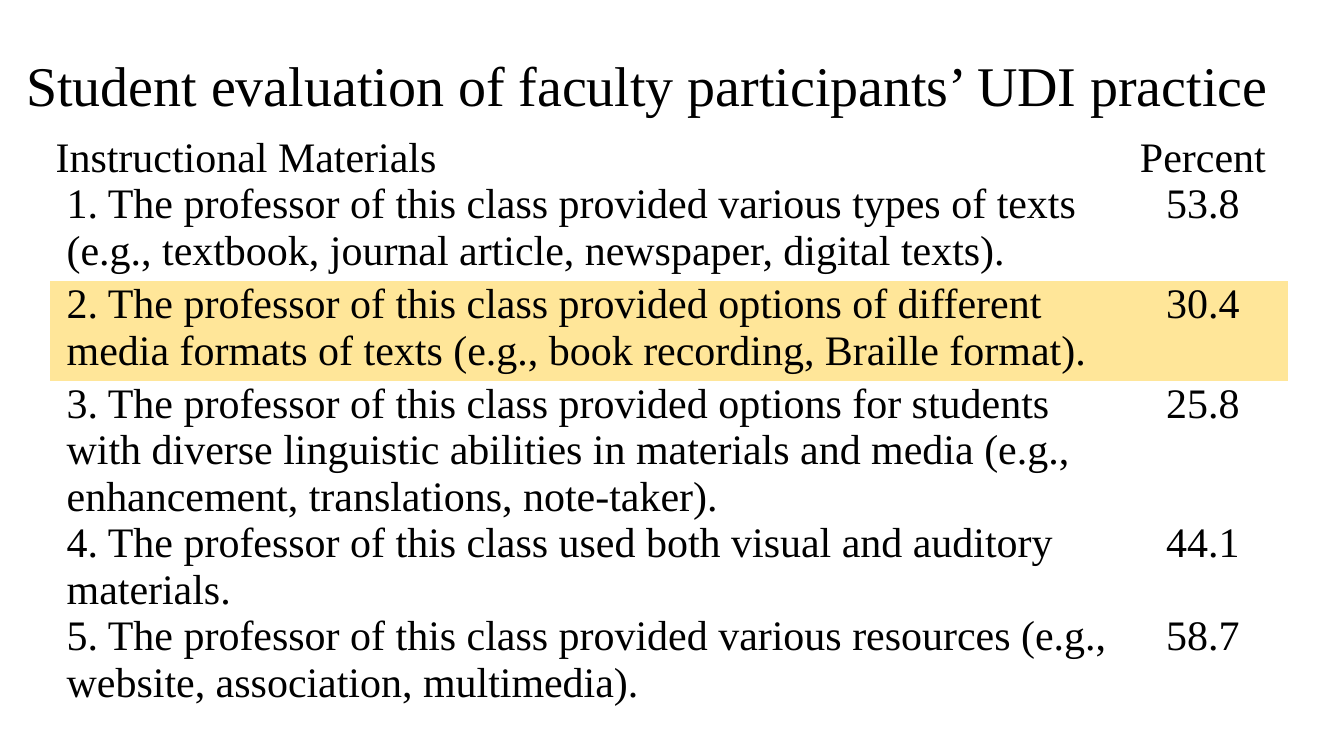
from pptx import Presentation
from pptx import util as u
from pptx.dml.color import RGBColor
from pptx.enum import text

BLACK = RGBColor(0x00, 0x00, 0x00)
WHITE = RGBColor(0xFF, 0xFF, 0xFF)
HIGHLIGHT = RGBColor(0xFF, 0xE6, 0x99)
FONT = "Times New Roman"
PLAIN_STYLE = "{2D5ABB26-0587-4C30-8999-92F81FD0307C}"
HIGHLIGHTED_ROW = 2
COLUMN_WIDTHS = (26.9, 4.29)
ROW_HEIGHTS = (0.97, 2.51, 2.51, 3.35, 1.68, 2.69)
RESULTS = (
    ("Instructional Materials", "Percent"),
    ("1. The professor of this class provided various types of texts "
     "(e.g., textbook, journal article, newspaper, digital texts).", "53.8"),
    ("2. The professor of this class provided options of different media "
     "formats of texts (e.g., book recording, Braille format).", "30.4"),
    ("3. The professor of this class provided options for students with "
     "diverse linguistic abilities in materials and media (e.g., "
     "enhancement, translations, note-taker).", "25.8"),
    ("4. The professor of this class used both visual and auditory "
     "materials.", "44.1"),
    ("5. The professor of this class provided various resources (e.g., "
     "website, association, multimedia).", "58.7"),
)


def format_runs(para, size):
    """Give every run of a paragraph the slide's font, size and colour."""
    for span in para.runs:
        span.font.name = FONT
        span.font.size = u.Pt(size)
        span.font.color.rgb = BLACK


def add_title(page, wording):
    """Place and fill the title placeholder."""
    title = page.shapes.title
    title.left, title.top = u.Cm(0.41), u.Cm(1.02)
    title.width, title.height = u.Cm(33.45), u.Cm(2.39)
    frame = title.text_frame
    frame.text = wording
    frame.word_wrap = True
    frame.auto_size = text.MSO_AUTO_SIZE.NONE
    frame.vertical_anchor = text.MSO_ANCHOR.MIDDLE
    para = frame.paragraphs[0]
    para.alignment = text.PP_ALIGN.LEFT
    para.line_spacing = 0.9
    format_runs(para, 40)


def fill_cell(cell, wording, fill, centred, indented):
    """Write one table cell with its fill, margins and alignment."""
    cell.text = wording
    cell.fill.solid()
    cell.fill.fore_color.rgb = fill
    cell.margin_left = cell.margin_right = u.Cm(0.13)
    cell.margin_top = cell.margin_bottom = 0
    para = cell.text_frame.paragraphs[0]
    para.space_before = para.space_after = u.Pt(3)
    para.alignment = text.PP_ALIGN.CENTER if centred else text.PP_ALIGN.LEFT
    if indented:
        para._p.get_or_add_pPr().set("marL", str(u.Cm(0.28)))
    format_runs(para, 30)


def add_results(page):
    """Add the table of statements and percentages."""
    frame = page.shapes.add_table(
        len(RESULTS), len(COLUMN_WIDTHS), u.Cm(1.27), u.Cm(3.4),
        u.Cm(sum(COLUMN_WIDTHS)), u.Cm(sum(ROW_HEIGHTS)))
    table = frame.table
    table.first_row = table.horz_banding = False
    table._tbl.tblPr[0].text = PLAIN_STYLE
    for column, width in zip(table.columns, COLUMN_WIDTHS):
        column.width = u.Cm(width)
    for r, (height, entries) in enumerate(zip(ROW_HEIGHTS, RESULTS)):
        table.rows[r].height = u.Cm(height)
        fill = HIGHLIGHT if r == HIGHLIGHTED_ROW else WHITE
        for c, wording in enumerate(entries):
            fill_cell(table.cell(r, c), wording, fill,
                      centred=c == 1, indented=r > 0 and c == 0)
    table.cell(0, 0).vertical_anchor = text.MSO_ANCHOR.MIDDLE


def main():
    """Build and save the slide."""
    deck = Presentation()
    deck.slide_width, deck.slide_height = u.Cm(33.87), u.Cm(19.05)
    page = deck.slides.add_slide(deck.slide_layouts[5])
    add_title(page, "Student evaluation of faculty participants’ UDI practice")
    add_results(page)
    deck.save("out.pptx")


if __name__ == "__main__":
    main()
